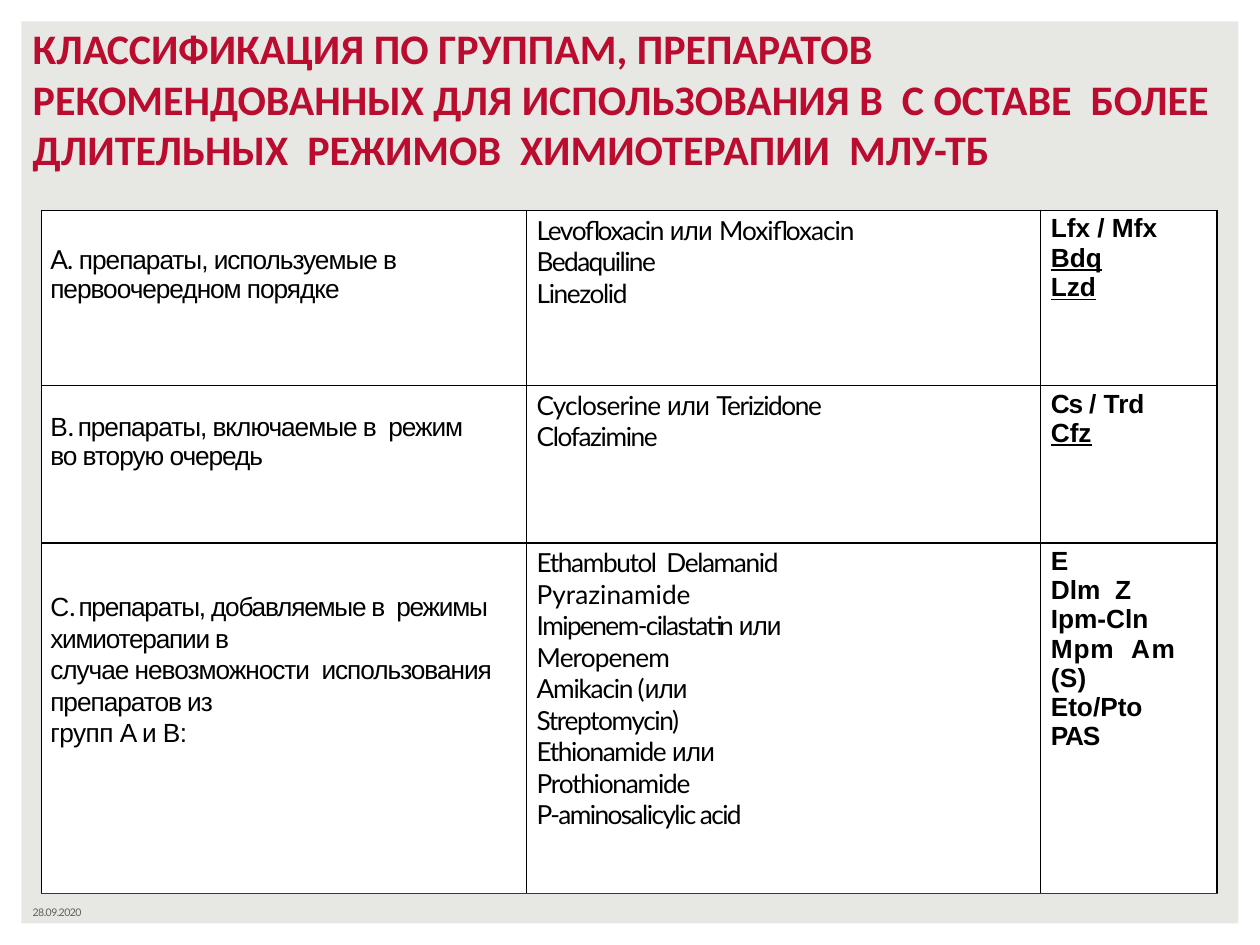
from dataclasses import dataclass

from lxml.etree import SubElement
from pptx import Presentation
from pptx.dml.color import RGBColor
from pptx.enum.shapes import MSO_SHAPE
from pptx.enum.text import MSO_ANCHOR, MSO_AUTO_SIZE, PP_ALIGN
from pptx.oxml.ns import qn
from pptx.util import Inches, Pt


@dataclass(frozen=True)
class Theme:
    panel: str = "E7E7E4"
    title: str = "B90C2E"
    date: str = "625C5B"
    text: str = "000000"
    cell: str = "FFFFFF"
    line: str = "000000"
    last_line: str = "C00000"
    title_size: float = 24
    body_size: float = 15
    date_size: float = 6


T = Theme()
TITLE = ("КЛАССИФИКАЦИЯ ПО ГРУППАМ, ПРЕПАРАТОВ РЕКОМЕНДОВАННЫХ ДЛЯ "
         "ИСПОЛЬЗОВАНИЯ В  С ОСТАВЕ  БОЛЕЕ  ДЛИТЕЛЬНЫХ  РЕЖИМОВ  "
         "ХИМИОТЕРАПИИ  МЛУ-ТБ")

COL_WIDTHS = (3.85, 4.08, 1.4)
ROW_HEIGHTS = (1.39, 1.25, 2.78)
GROUP_TOPS = (0.26, 0.2, 0.38)  # top margin of the first column, by row

GROUP = {"name": "Arial", "spc": -0.6}
MARK = {"name": "Lato"}
DRUG = {"name": "Lato", "spc": -0.8}
OR = {"name": "Arial", "spc": -0.5}
CODE = {"name": "Arial", "bold": True}
COL_FORMATS = (GROUP, DRUG, CODE)
UNDER = {"underline": True}

# Row > cell > paragraph > run. A run is (text, changes to the column's format);
# "\n" in a run is a line break.
ROWS = [
    [
        [[("A. ", MARK), ("препараты, используемые в\nпервоочередном порядке", {})]],
        [[("Levofloxacin ", {}), ("или ", OR), ("Moxifloxacin", {"spc": -0.6})],
         [("Bedaquiline", {"spc": -0.9})],
         [("Linezolid", {})]],
        [[("Lfx / Mfx", {})], [("Bdq", UNDER)], [("Lzd", UNDER)]],
    ],
    [
        [[("В", {"spc": -1.7}), (". ", {"name": "Lato", "spc": -1.7}),
          ("препараты, включаемые в  режим\nво вторую очередь", {})]],
        [[("Cycloserine ", {"spc": -0.5}), ("или ", OR),
          ("Terizidone\nClofazimine", {})]],
        [[("Cs ", {"spc": -0.7}), ("/ Trd\n", {}), ("Cfz", UNDER)]],
    ],
    [
        [[("С", {"spc": -2.1}), (". ", {"name": "Lato", "spc": -2.1}),
          ("препараты, добавляемые в  режимы\nхимиотерапии в", {"spc": -0.7})],
         [("случае невозможности  использования\nпрепаратов из", {})],
         [("групп A и B:", {"spc": -0.3})]],
        [[("Ethambutol  Delamanid\n", {}), ("Pyrazinamide", {"spc": 0})],
         [("Imipenem-cilastatin ", {"spc": -0.9}), ("или", OR)],
         [("Meropenem", {"spc": -0.5})],
         [("Amikacin (", {"spc": -0.7}), ("или\n", OR), ("Streptomycin)", {})],
         [("Ethionamide ", {}), ("или\n", OR), ("Prothionamide", {"spc": -0.7})],
         [("P-aminosalicylic acid", {"spc": -0.9})]],
        [[("E", {})],
         [("Dlm  ", {}), ("Z", {"spc": 1.3})],
         [("Ipm-Cln\n", {}), ("Mpm  ", {"spc": 0.5}), ("Am\n", {"spc": 0.9}),
          ("(S)", {"spc": 0.2})],
         [("Eto/Pto", {})],
         [("PAS", {"spc": -0.7})]],
    ],
]


def add_run(p, text, size, color, spc=0, **font):
    """Add text to p, with tracking spc in points and a line break at each newline."""
    for i, line in enumerate(text.split("\n")):
        if i:
            p.add_line_break()
        if not line:
            continue
        r = p.add_run()
        r.text = line
        r.font.color.rgb = RGBColor.from_string(color)
        for key, value in {"size": Pt(size), **font}.items():
            setattr(r.font, key, value)
        if spc:
            r.font._element.set("spc", str(round(spc * 100)))


def set_margins(target, left, top, right=0, bottom=0):
    for side, value in zip(("left", "top", "right", "bottom"),
                           (left, top, right, bottom)):
        setattr(target, f"margin_{side}", Inches(value))


def set_borders(cell, bottom):
    tc_pr = cell._tc.get_or_add_tcPr()
    for side in "LRTB":
        ln = SubElement(tc_pr, qn(f"a:ln{side}"), w=str(Pt(1)))
        fill = SubElement(ln, qn("a:solidFill"))
        SubElement(fill, qn("a:srgbClr"), val=bottom if side == "B" else T.line)


def add_panel(s, x, y, w, h):
    sp = s.shapes.add_shape(MSO_SHAPE.RECTANGLE, *map(Inches, (x, y, w, h)))
    sp.shadow.inherit = False
    sp.fill.solid()
    sp.fill.fore_color.rgb = RGBColor.from_string(T.panel)
    sp.line.fill.background()


def fill_line(sp, box, text, **font):
    """Place sp in box and give it one left-aligned paragraph."""
    for key, value in zip(("left", "top", "width", "height"), box):
        setattr(sp, key, Inches(value))
    tf = sp.text_frame
    for key, value in {"word_wrap": True, "auto_size": MSO_AUTO_SIZE.NONE,
                       "vertical_anchor": MSO_ANCHOR.TOP}.items():
        setattr(tf, key, value)
    set_margins(tf, 0.01, 0.01)
    p = tf.paragraphs[0]
    p.alignment = PP_ALIGN.LEFT
    p.line_spacing = 1.0
    add_run(p, text, **font)


def fill_cell(cell, paragraphs, row, col):
    first_col = col == 0
    set_margins(cell, 0.07 if first_col else 0.08,
                GROUP_TOPS[row] if first_col else 0.03)
    set_borders(cell, T.last_line if row == len(ROWS) - 1 else T.line)
    cell.fill.solid()
    cell.fill.fore_color.rgb = RGBColor.from_string(T.cell)
    tf = cell.text_frame
    for i, runs in enumerate(paragraphs):
        p = tf.add_paragraph() if i else tf.paragraphs[0]
        if first_col and len(paragraphs) > 1:
            p.line_spacing = Pt(18)
        for text, changes in runs:
            add_run(p, text, T.body_size, T.text, **{**COL_FORMATS[col], **changes})


def add_drug_table(s, x, y):
    box = (x, y, sum(COL_WIDTHS), sum(ROW_HEIGHTS))
    table = s.shapes.add_table(len(ROWS), len(COL_WIDTHS), *map(Inches, box)).table
    table.first_row = table.horz_banding = False
    for column, width in zip(table.columns, COL_WIDTHS):
        column.width = Inches(width)
    for row, (height, cells) in enumerate(zip(ROW_HEIGHTS, ROWS)):
        table.rows[row].height = Inches(height)
        for col, paragraphs in enumerate(cells):
            fill_cell(table.cell(row, col), paragraphs, row, col)


def add_classification_slide(prs):
    s = prs.slides.add_slide(prs.slide_layouts[5])
    add_panel(s, 0.17, 0.17, 9.66, 7.16)
    title = s.shapes.title
    s.shapes._spTree.append(title._element)  # in front of the panel
    fill_line(title, (0.25, 0.17, 9.5, 1.23), TITLE, size=T.title_size,
              color=T.title, name="Calibri", bold=True)
    add_drug_table(s, 0.33, 1.67)
    date_box = (0.25, 7.18, 0.5, 0.12)
    date = s.shapes.add_textbox(*map(Inches, date_box))
    fill_line(date, date_box, "28.09.2020", size=T.date_size, color=T.date,
              name="Lato", spc=-0.3)


def main():
    prs = Presentation()
    prs.slide_width, prs.slide_height = Inches(10), Inches(7.5)
    add_classification_slide(prs)
    prs.save("out.pptx")


if __name__ == "__main__":
    main()
